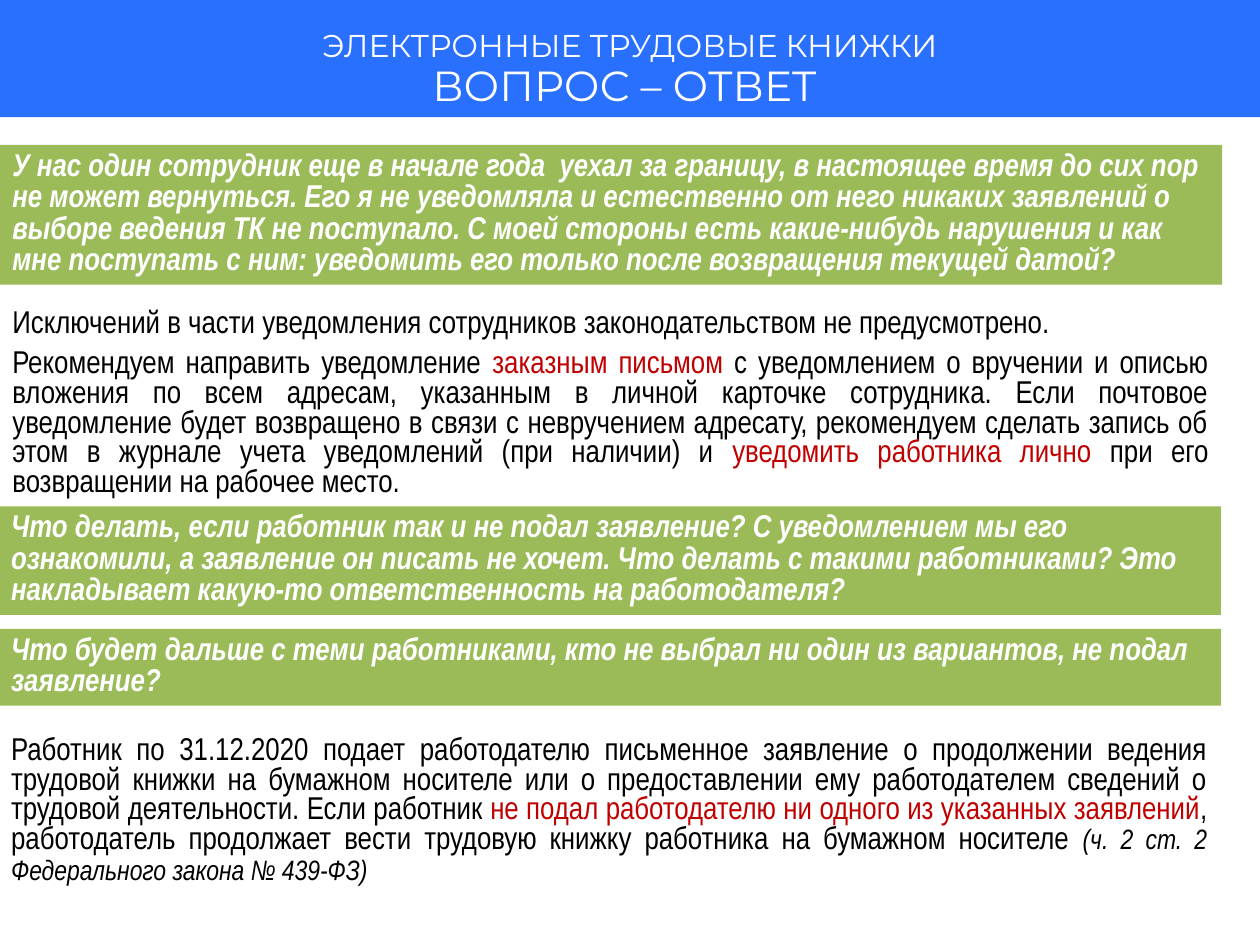
from dataclasses import dataclass

from pptx import Presentation
from pptx.dml.color import RGBColor
from pptx.enum.shapes import MSO_SHAPE as Shape
from pptx.enum.text import MSO_ANCHOR as Anchor, MSO_AUTO_SIZE as AutoSize, PP_ALIGN as Align
from pptx.util import Inches, Pt


@dataclass(frozen=True)
class Theme:
    banner: RGBColor = RGBColor(0x29, 0x70, 0xFF)
    question: RGBColor = RGBColor(0x9B, 0xBB, 0x59)
    light: RGBColor = RGBColor(0xFF, 0xFF, 0xFF)
    dark: RGBColor = RGBColor(0, 0, 0)
    accent: RGBColor = RGBColor(0xC0, 0, 0)
    heading_font: str = "Montserrat"
    body_font: str = "Arial Narrow"
    title_size: Pt = Pt(24)
    body_size: Pt = Pt(18)
    citation_size: Pt = Pt(16)
    title_spacing: Pt = Pt(26)
    question_spacing: Pt = Pt(18)
    answer_spacing: Pt = Pt(17)
    answer_gap: Pt = Pt(6)


THEME = Theme()

TITLE = [("ЭЛЕКТРОННЫЕ ТРУДОВЫЕ КНИЖКИ", THEME.body_size), ("ВОПРОС – ОТВЕТ ", THEME.title_size)]

QUESTIONS = [
    ((0, 1.15, 9.7, 1.11),
     "У нас один сотрудник еще в начале года  уехал за границу, в настоящее время до сих пор "
     "не может вернуться. Его я не уведомляла и естественно от него никаких заявлений о выборе "
     "ведения ТК не поступало. С моей стороны есть какие-нибудь нарушения и как мне поступать "
     "с ним: уведомить его только после возвращения текущей датой?"),
    ((-0.01, 4.02, 9.7, 0.86),
     "Что делать, если работник так и не подал заявление? С уведомлением мы его ознакомили, "
     "а заявление он писать не хочет. Что делать с такими работниками? Это накладывает "
     "какую-то ответственность на работодателя?"),
    ((-0.01, 4.99, 9.7, 0.61),
     "Что будет дальше с теми работниками, кто не выбрал ни один из вариантов, не подал заявление?"),
]

ANSWERS = [
    ((0, 2.41, 9.69, 1.62), [
        [("Исключений в части уведомления сотрудников законодательством не предусмотрено.", "plain")],
        [("Рекомендуем направить уведомление ", "plain"),
         ("заказным письмом", "accent"),
         (" с уведомлением о вручении и описью вложения по всем адресам, указанным в личной "
          "карточке сотрудника. Если почтовое уведомление будет возвращено в связи с невручением "
          "адресату, рекомендуем сделать запись об этом в журнале учета уведомлений "
          "(при наличии) и ", "plain"),
         ("уведомить работника лично ", "accent"),
         ("при его возвращении на рабочее место.", "plain")],
    ]),
    ((-0.01, 5.8, 9.69, 1.29), [
        [("Работник по 31.12.2020 подает работодателю письменное заявление о продолжении ведения "
          "трудовой книжки на бумажном носителе или о предоставлении ему работодателем сведений "
          "о трудовой деятельности. Если работник ", "plain"),
         ("не подал работодателю ни одного из указанных заявлений", "accent"),
         (", работодатель продолжает вести трудовую книжку работника на бумажном носителе ", "plain"),
         ("(ч. 2 ст. 2 Федерального закона № 439-ФЗ)", "citation")],
    ]),
]


def add_bar(slide, box, color):
    bar = slide.shapes.add_shape(Shape.RECTANGLE, *map(Inches, box))
    bar.shadow.inherit = False
    bar.fill.solid()
    bar.fill.fore_color.rgb = color
    bar.line.fill.background()
    return bar


def prepare_frame(holder):
    frame = holder.text_frame
    frame.word_wrap = True
    frame.auto_size = AutoSize.SHAPE_TO_FIT_TEXT
    frame.vertical_anchor = Anchor.TOP
    return frame


def add_paragraph(frame, index, align, spacing):
    paragraph = frame.add_paragraph() if index else frame.paragraphs[0]
    paragraph.alignment = align
    paragraph.line_spacing = spacing
    return paragraph


def add_run(paragraph, words, color, font=THEME.body_font, size=THEME.body_size,
            bold=False, italic=False):
    run = paragraph.add_run()
    run.text = words
    run.font.name = font
    run.font.size = size
    run.font.bold = bold
    run.font.italic = italic
    run.font.color.rgb = color


def add_header(slide, box):
    left, top, width, height = box
    add_bar(slide, box, THEME.banner)
    title_box = (left + 0.01, top + 0.1, width - 0.01, height - 0.1)
    frame = prepare_frame(slide.shapes.add_textbox(*map(Inches, title_box)))
    for index, (words, size) in enumerate(TITLE):
        line = add_paragraph(frame, index, Align.CENTER, THEME.title_spacing)
        add_run(line, words, THEME.light, THEME.heading_font, size)


def add_question(slide, box, words):
    frame = prepare_frame(add_bar(slide, box, THEME.question))
    question = add_paragraph(frame, 0, Align.LEFT, THEME.question_spacing)
    add_run(question, words, THEME.light, bold=True, italic=True)


def add_answer(slide, box, paragraphs):
    frame = prepare_frame(slide.shapes.add_textbox(*map(Inches, box)))
    for index, parts in enumerate(paragraphs):
        answer = add_paragraph(frame, index, Align.JUSTIFY, THEME.answer_spacing)
        answer.space_after = THEME.answer_gap
        for words, role in parts:
            citation = role == "citation"
            add_run(answer, words, THEME.accent if role == "accent" else THEME.dark,
                    size=THEME.citation_size if citation else THEME.body_size, italic=citation)


def main():
    deck = Presentation()
    deck.slide_width, deck.slide_height = Inches(10), Inches(7.5)
    slide = deck.slides.add_slide(deck.slide_layouts[6])
    add_header(slide, (-0.01, 0, 10.01, 0.93))
    for box, paragraphs in ANSWERS:
        add_answer(slide, box, paragraphs)
    for box, words in QUESTIONS:
        add_question(slide, box, words)
    deck.save("out.pptx")


if __name__ == "__main__":
    main()
